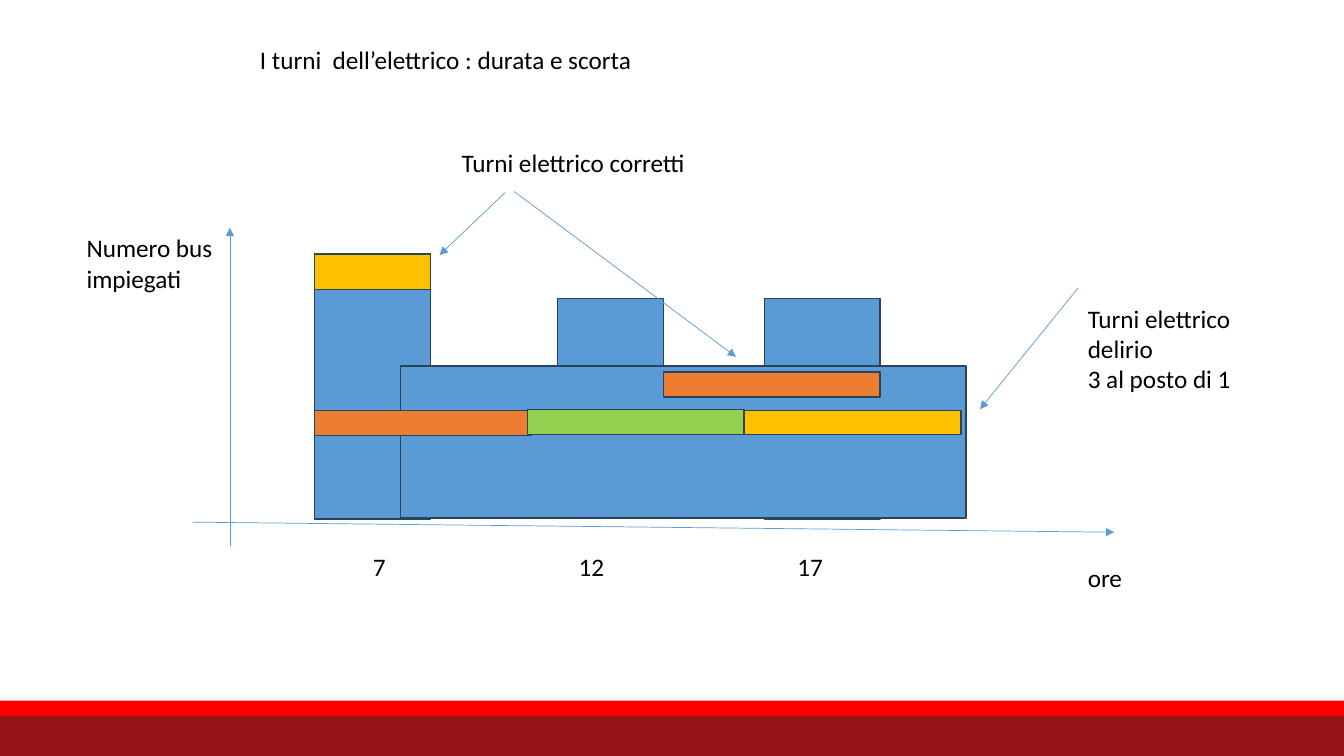
from dataclasses import dataclass

from lxml.etree import SubElement
from pptx import Presentation
from pptx.dml.color import RGBColor
from pptx.enum.shapes import MSO_CONNECTOR, MSO_SHAPE
from pptx.enum.text import MSO_AUTO_SIZE
from pptx.oxml.ns import qn
from pptx.slide import Slide
from pptx.util import Inches, Pt


@dataclass(frozen=True)
class Theme:
    font: str = "Calibri"
    text_size: float = 18
    bar_line: float = 1
    arrow_line: float = 0.5
    text: str = "000000"
    blue: str = "5B9BD5"
    outline: str = "28445D"
    orange: str = "ED7D31"
    yellow: str = "FFC000"
    green: str = "92D050"
    red: str = "FF0000"
    dark_red: str = "961518"


THEME = Theme()


@dataclass(frozen=True)
class Bar:
    left: float
    top: float
    width: float
    height: float
    fill: str
    outline: str | None = THEME.outline


@dataclass(frozen=True)
class Arrow:
    start: tuple[float, float]
    end: tuple[float, float]


SLIDE_WIDTH, SLIDE_HEIGHT = 13.33, 7.5
SHIFT_WIDTH, SHIFT_HEIGHT = 2.15, 0.25
MORNING_LEFT, PEAK_WIDTH = 3.12, 1.15

FOOTER_BANDS = [
    Bar(0, 6.95, SLIDE_WIDTH, 0.16, THEME.red, None),
    Bar(0, 7.1, SLIDE_WIDTH, 0.4, THEME.dark_red, None),
]

# Buses in service: three peaks and the all-day base
SERVICE = [
    Bar(MORNING_LEFT, 2.52, PEAK_WIDTH, 2.63, THEME.blue),
    Bar(5.53, 2.96, 1.05, 2.16, THEME.blue),
    Bar(7.58, 2.96, PEAK_WIDTH, 2.19, THEME.blue),
    Bar(3.97, 3.63, 5.61, 1.51, THEME.blue),
]

# Electric bus shifts laid over the service
SHIFTS = [
    Bar(6.58, 3.69, SHIFT_WIDTH, SHIFT_HEIGHT, THEME.orange),
    Bar(MORNING_LEFT, 2.52, PEAK_WIDTH, 0.35, THEME.yellow),
    Bar(MORNING_LEFT, 4.07, SHIFT_WIDTH, SHIFT_HEIGHT, THEME.orange),
    Bar(5.23, 4.06, SHIFT_WIDTH, SHIFT_HEIGHT, THEME.green),
    Bar(7.38, 4.07, SHIFT_WIDTH, 0.24, THEME.yellow),
]

AXES = [
    Arrow((2.28, 5.42), (2.28, 2.26)),
    Arrow((1.91, 5.18), (11.05, 5.28)),
]

POINTERS = [
    Arrow((10.69, 2.86), (9.72, 4.06)),
    Arrow((5.01, 1.91), (4.36, 2.53)),
    Arrow((5.1, 1.9), (7.3, 3.54)),
]


def add_bar(slide: Slide, bar: Bar) -> None:
    box = slide.shapes.add_shape(
        MSO_SHAPE.RECTANGLE,
        Inches(bar.left), Inches(bar.top), Inches(bar.width), Inches(bar.height),
    )
    box.shadow.inherit = False
    box.fill.solid()
    box.fill.fore_color.rgb = RGBColor.from_string(bar.fill)
    if bar.outline is None:
        box.line.fill.background()
    else:
        box.line.color.rgb = RGBColor.from_string(bar.outline)
        box.line.width = Pt(THEME.bar_line)


def add_arrow(slide: Slide, arrow: Arrow) -> None:
    line = slide.shapes.add_connector(
        MSO_CONNECTOR.STRAIGHT,
        *(Inches(value) for value in (*arrow.start, *arrow.end)),
    )
    line.line.color.rgb = RGBColor.from_string(THEME.blue)
    line.line.width = Pt(THEME.arrow_line)
    SubElement(line.line._get_or_add_ln(), qn("a:tailEnd"), type="triangle")
    SubElement(line._element.spPr, qn("a:effectLst"))


def add_text(
    slide: Slide, text: str, *, left: float, top: float, width: float,
    height: float = 0.4, wrap: bool = True, tab_stops: tuple[float, ...] = (),
) -> None:
    frame = slide.shapes.add_textbox(
        Inches(left), Inches(top), Inches(width), Inches(height)
    ).text_frame
    frame.word_wrap = wrap
    frame.auto_size = MSO_AUTO_SIZE.SHAPE_TO_FIT_TEXT
    for index, content in enumerate(text.split("\n")):
        paragraph = frame.add_paragraph() if index else frame.paragraphs[0]
        if tab_stops:
            tabs = SubElement(paragraph._p.get_or_add_pPr(), qn("a:tabLst"))
            for stop in tab_stops:
                SubElement(tabs, qn("a:tab"), pos=str(Inches(stop)), algn="l")
        run = paragraph.add_run()
        run.text = content
        run.font.name = THEME.font
        run.font.size = Pt(THEME.text_size)
        run.font.color.rgb = RGBColor.from_string(THEME.text)


def main() -> None:
    deck = Presentation()
    deck.slide_width = Inches(SLIDE_WIDTH)
    deck.slide_height = Inches(SLIDE_HEIGHT)
    slide = deck.slides.add_slide(deck.slide_layouts[6])

    # Footer and chart
    for bar in FOOTER_BANDS + SERVICE + SHIFTS:
        add_bar(slide, bar)
    for arrow in AXES + POINTERS:
        add_arrow(slide, arrow)

    # Title and callouts
    add_text(slide, "I turni  dell’elettrico : durata e scorta",
             left=2.48, top=0.39, width=4.86)
    add_text(slide, "Turni elettrico corretti",
             left=4.48, top=1.41, width=2.51, wrap=False)
    add_text(slide, "Turni elettrico delirio\n3 al posto di 1",
             left=10.69, top=2.96, width=1.98, height=1.01)

    # Axis labels
    add_text(slide, "Numero bus\nimpiegati",
             left=0.76, top=2.26, width=1.52, height=0.71, wrap=False)
    add_text(slide, "7\t12\t17",
             left=3.6, top=5.42, width=4.77, tab_stops=(2.04, 4.21))
    add_text(slide, "ore", left=10.69, top=5.53, width=0.91)

    deck.save("out.pptx")


if __name__ == "__main__":
    main()
